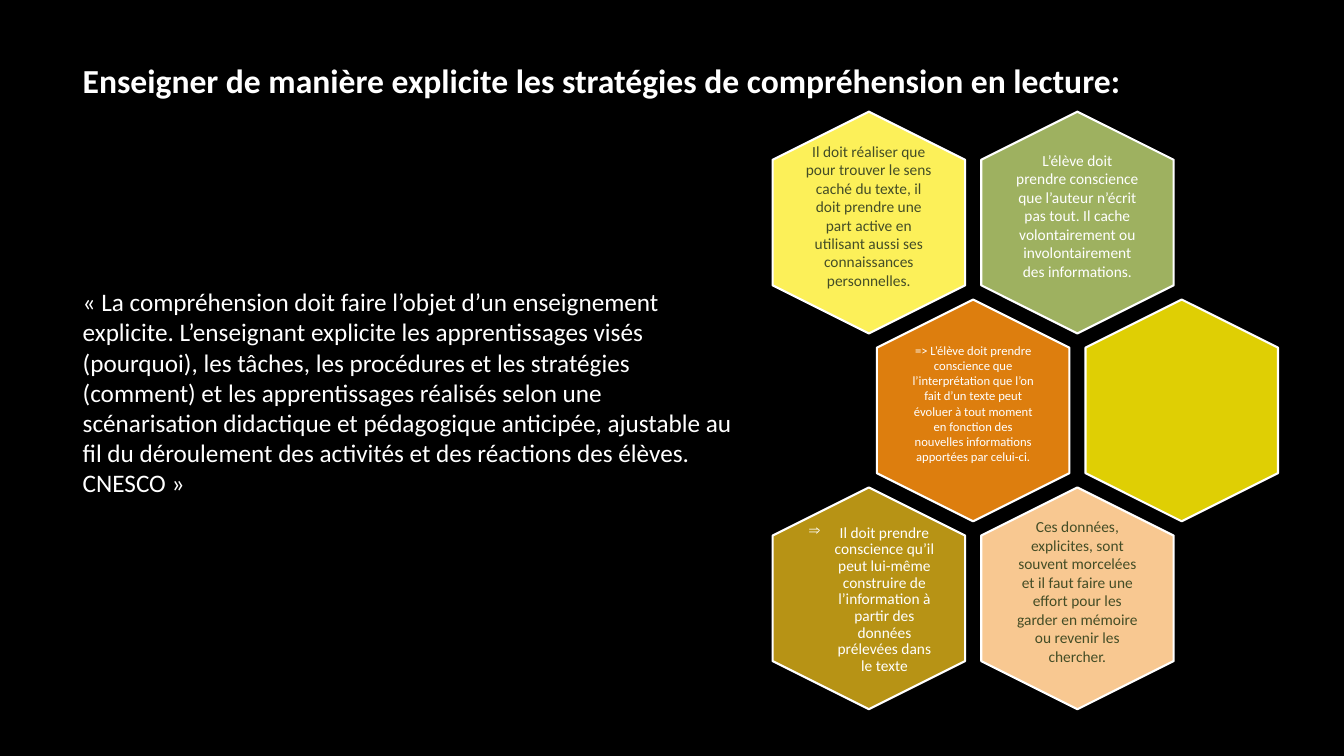
from dataclasses import dataclass

from lxml import etree
from pptx import Presentation
from pptx.dml.color import RGBColor
from pptx.enum.shapes import MSO_SHAPE
from pptx.enum.text import MSO_ANCHOR, PP_ALIGN
from pptx.oxml.ns import qn
from pptx.util import Pt

HEXAGON = MSO_SHAPE.HEXAGON
TOP, MIDDLE = MSO_ANCHOR.TOP, MSO_ANCHOR.MIDDLE
LEFT, CENTER = PP_ALIGN.LEFT, PP_ALIGN.CENTER


@dataclass(frozen=True)
class Theme:
    font: str = "Calibri"
    black: str = "000000"
    white: str = "FFFFFF"
    dark: str = "444D26"
    yellow: str = "FCF059"
    green: str = "9EB160"
    orange: str = "DD7E0E"
    lemon: str = "DFCF04"
    gold: str = "B79315"
    peach: str = "F8C891"
    title_size: float = 24
    body_size: float = 18
    cell_size: float = 11
    small_size: float = 9


THEME = Theme()

# Honeycomb: centre of the first cell, distances between cells, cell size
FIRST_X, FIRST_Y = 620.6, 159
COLUMN_STEP, ROW_STEP = 149, 134.2
CELL_LENGTH, CELL_BREADTH = 158.4, 137.5
LABEL_WIDTH, LABEL_HEIGHT = 95, 109
BULLET_INDENT = 22.3

TITLE = "Enseigner de manière explicite les stratégies de compréhension en lecture:"
QUOTE = (
    "« La compréhension doit faire l’objet d’un enseignement explicite. "
    "L’enseignant explicite les apprentissages visés (pourquoi), les tâches, "
    "les procédures et les stratégies (comment) et les apprentissages réalisés "
    "selon une scénarisation didactique et pédagogique anticipée, ajustable au "
    "fil du déroulement des activités et des réactions des élèves. CNESCO »"
)

# row, column, fill, text colour, text size, inset, vertical shift, bullet, text
CELLS = [
    (0, 1, THEME.green, THEME.white, THEME.cell_size, 3.6, -5, None,
     "L’élève doit prendre conscience que l’auteur n’écrit pas tout. Il cache "
     "volontairement ou involontairement des informations."),
    (0, 0, THEME.yellow, THEME.dark, THEME.cell_size, 0, -5, None,
     "Il doit réaliser que pour trouver le sens caché du texte, il doit prendre "
     "une part active en utilisant aussi ses connaissances personnelles."),
    (2, 1, THEME.peach, THEME.dark, THEME.cell_size, 3.6, -5, None,
     "Ces données, explicites, sont souvent morcelées et il faut faire une "
     "effort pour les garder en mémoire ou revenir les chercher."),
    (1, 1, THEME.lemon, THEME.white, THEME.cell_size, 0, 0, None, ""),
    (1, 0, THEME.orange, THEME.white, THEME.small_size, 2.9, -5, None,
     "=> L’élève doit prendre conscience que l’interprétation que l’on fait d’un "
     "texte peut évoluer à tout moment en fonction des nouvelles informations "
     "apportées par celui-ci."),
    (2, 0, THEME.gold, THEME.white, THEME.cell_size, 0, 1, "⇒",
     "Il doit prendre conscience qu’il peut lui-même construire de l’information "
     "à partir des données prélevées dans le texte"),
]


class SlideBuilder:
    def __init__(self, slide, theme):
        self.slide = slide
        self.theme = theme

    def background(self, color):
        fill = self.slide.background.fill
        fill.solid()
        fill.fore_color.rgb = RGBColor.from_string(color)

    def text(self, text, left, top, width, height, size, color, bold=False,
             align=LEFT, anchor=TOP, insets=(7.2, 3.6), bullet=None):
        box = self.slide.shapes.add_textbox(Pt(left), Pt(top), Pt(width), Pt(height))
        frame = box.text_frame
        frame.word_wrap = True
        frame.vertical_anchor = anchor
        frame.margin_left = frame.margin_right = Pt(insets[0])
        frame.margin_top = frame.margin_bottom = Pt(insets[1])
        paragraph = frame.paragraphs[0]
        paragraph.text = text
        paragraph.alignment = align
        if bullet:
            self.bullet(paragraph, bullet)
        font = paragraph.font
        font.name = self.theme.font
        font.size = Pt(size)
        font.bold = bold
        font.color.rgb = RGBColor.from_string(color)

    def bullet(self, paragraph, character):
        paragraph.line_spacing = 0.9
        properties = paragraph._p.get_or_add_pPr()
        properties.set("marL", str(Pt(BULLET_INDENT)))
        properties.set("indent", str(-Pt(BULLET_INDENT)))
        etree.SubElement(properties, qn("a:buChar")).set("char", character)

    def hexagon(self, center_x, center_y, color):
        shape = self.slide.shapes.add_shape(
            HEXAGON, Pt(center_x - CELL_LENGTH / 2), Pt(center_y - CELL_BREADTH / 2),
            Pt(CELL_LENGTH), Pt(CELL_BREADTH))
        shape.rotation = 90
        shape.shadow.inherit = False
        shape.fill.solid()
        shape.fill.fore_color.rgb = RGBColor.from_string(color)
        shape.line.color.rgb = RGBColor.from_string(self.theme.white)
        shape.line.width = Pt(1.5)


def main():
    presentation = Presentation()
    presentation.slide_width, presentation.slide_height = Pt(960), Pt(540)
    slide = presentation.slides.add_slide(presentation.slide_layouts[6])
    builder = SlideBuilder(slide, THEME)
    builder.background(THEME.black)

    # Title and quotation
    builder.text(TITLE, 52, 39, 828, 37, THEME.title_size, THEME.white, bold=True)
    builder.text(QUOTE, 52, 201, 480, 160, THEME.body_size, THEME.white)

    # Honeycomb, with the middle row moved by half a step
    for row, column, fill, color, size, inset, shift, bullet, text in CELLS:
        center_x = FIRST_X + COLUMN_STEP * (column + row % 2 / 2)
        center_y = FIRST_Y + ROW_STEP * row
        builder.hexagon(center_x, center_y, fill)
        if text:
            builder.text(text, center_x - LABEL_WIDTH / 2,
                         center_y - LABEL_HEIGHT / 2 + shift,
                         LABEL_WIDTH, LABEL_HEIGHT, size, color, align=CENTER,
                         anchor=MIDDLE, insets=(inset, inset), bullet=bullet)

    presentation.save("out.pptx")


if __name__ == "__main__":
    main()
